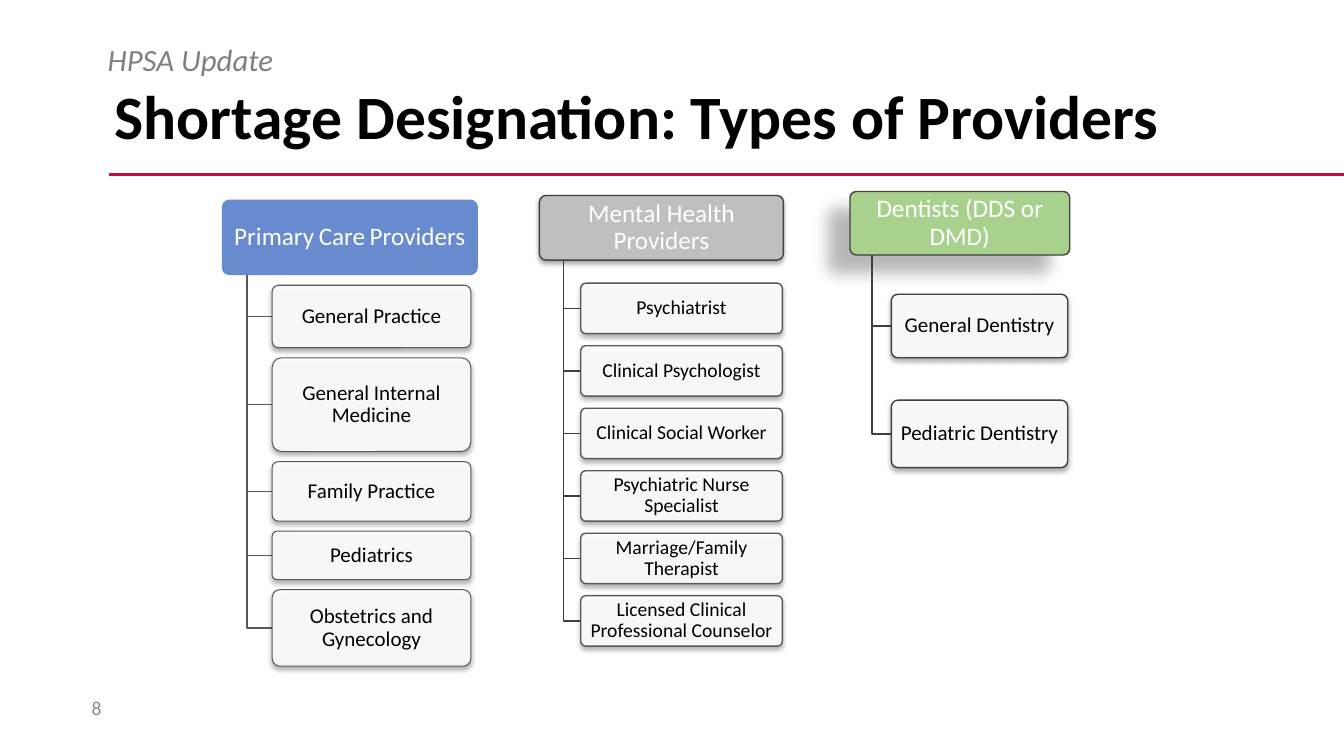
"""Build the slide on provider types for shortage designation."""
from dataclasses import dataclass
from typing import Any, Optional

from lxml.etree import SubElement
from pptx import Presentation
from pptx.dml.color import RGBColor as Rgb
from pptx.enum.shapes import MSO_CONNECTOR as Connector, MSO_SHAPE as Preset
from pptx.enum.text import MSO_ANCHOR as Anchor, PP_ALIGN as Align
from pptx.oxml.ns import qn
from pptx.util import Inches, Pt


@dataclass(frozen=True)
class Theme:
    """Colours and type sizes."""
    font: str = "Calibri"
    white: str = "FFFFFF"
    black: str = "000000"
    rule: str = "C40E3E"
    subtitle: str = "808080"
    number: str = "8C8C8C"
    dark: str = "404040"
    medium: str = "595959"
    blue: str = "688ACE"
    grey: str = "BFBFBF"
    green: str = "A9D18E"
    title_size: int = 44
    subtitle_size: int = 22
    header_size: int = 18
    leaf_size: int = 15
    small_size: int = 14


@dataclass(frozen=True)
class Box:
    """Position and size in inches."""
    left: float
    top: float
    width: float
    height: float

    def emu(self) -> tuple:
        """Return the four lengths in slide units."""
        return tuple(map(Inches, (self.left, self.top, self.width, self.height)))


@dataclass(frozen=True)
class Shadow:
    """Outer shadow with opacity in percent, lengths in points, angle in degrees."""
    opacity: int
    blur: float
    distance: float
    angle: int


@dataclass(frozen=True)
class Outline:
    """Line colour and width in points."""
    color: str
    width: float = 1


@dataclass(frozen=True)
class Leaf:
    """One provider type and the height of its card."""
    label: str
    height: float


@dataclass(frozen=True)
class Branch:
    """A provider group with its header and leaves."""
    header: str
    box: Box
    fill: str
    outline: Optional[Outline]
    shadow: Optional[Shadow]
    trunk_x: float
    leaf_x: float
    leaf_top: float
    leaf_width: float
    leaf_gap: float
    leaf_size: int
    leaf_outline: Outline
    elbow: Outline
    leaves: tuple
    space_size: int = 18


THEME = Theme()
SOFT = Shadow(32, 3.5, 2.2, 90)
WIDE = Shadow(28, 11.8, 19.7, 141)
DARK, MEDIUM = Outline(THEME.dark), Outline(THEME.medium)
MENTAL_HEALTH = ("Psychiatrist", "Clinical Psychologist", "Clinical Social Worker",
                 "Psychiatric Nurse Specialist", "Marriage/Family Therapist",
                 "Licensed Clinical Professional Counselor")
BRANCHES = (
    Branch("Dentists (DDS or DMD)", Box(8.43, 1.9, 2.18, 0.63), THEME.green, DARK, WIDE,
           8.65, 8.84, 2.92, 1.75, 0.42, THEME.leaf_size, DARK, DARK,
           (Leaf("General Dentistry", 0.63), Leaf("Pediatric Dentistry", 0.67))),
    Branch("Mental Health Providers", Box(5.35, 1.94, 2.42, 0.64), THEME.grey, DARK, SOFT,
           5.59, 5.76, 2.81, 2, 0.12, THEME.small_size, MEDIUM, DARK,
           tuple(Leaf(label, 0.5) for label in MENTAL_HEALTH)),
    Branch("Primary Care Providers", Box(2.2, 1.98, 2.54, 0.75), THEME.blue, None, None,
           2.45, 2.7, 2.83, 1.97, 0.1, THEME.leaf_size, Outline(THEME.medium, 0.75), MEDIUM,
           (Leaf("General Practice", 0.62), Leaf("General Internal Medicine", 0.93),
            Leaf("Family Practice", 0.59), Leaf("Pediatrics", 0.48),
            Leaf("Obstetrics and Gynecology", 0.76)), THEME.small_size),
)


def set_values(target: Any, values: dict) -> None:
    """Set every named attribute on the target."""
    for name, value in values.items():
        setattr(target, name, value)


def write(shape: Any, runs: list, color: str, frame: dict, paragraph: dict,
          **emphasis: bool) -> None:
    """Write sized runs into the only paragraph of a shape."""
    set_values(shape.text_frame, {"word_wrap": True, **frame})
    line = shape.text_frame.paragraphs[0]
    set_values(line, paragraph)
    for text, size in runs:
        run = line.add_run()
        run.text = text
        set_values(run.font, {"name": THEME.font, "size": Pt(size), **emphasis})
        run.font.color.rgb = Rgb.from_string(color)


def set_outline(line: Any, outline: Outline) -> None:
    """Apply an outline to a line format."""
    line.color.rgb = Rgb.from_string(outline.color)
    line.width = Pt(outline.width)


def add_shadow(shape: Any, shadow: Shadow) -> None:
    """Put an outer shadow into the effect list of a shape."""
    effects = shape._element.spPr.find(qn("a:effectLst"))
    outer = SubElement(effects, qn("a:outerShdw"), {
        "blurRad": str(Pt(shadow.blur)), "dist": str(Pt(shadow.distance)),
        "dir": str(shadow.angle * 60000), "algn": "ctr", "rotWithShape": "0"})
    color = SubElement(outer, qn("a:srgbClr"), val=THEME.black)
    SubElement(color, qn("a:alpha"), val=str(shadow.opacity * 1000))


def add_card(slide: Any, box: Box, fill: str, outline: Optional[Outline],
             shadow: Optional[Shadow], runs: list, color: str, inset: float,
             opacity: int = 100) -> None:
    """Draw a rounded card with centred text."""
    card = slide.shapes.add_shape(Preset.ROUNDED_RECTANGLE, *box.emu())
    card.adjustments[0] = 0.1
    card.shadow.inherit = False
    card.fill.solid()
    card.fill.fore_color.rgb = Rgb.from_string(fill)
    if opacity < 100:
        tint = card._element.spPr.find(qn("a:solidFill"))[0]
        SubElement(tint, qn("a:alpha"), val=str(opacity * 1000))
    if outline:
        set_outline(card.line, outline)
    else:
        card.line.fill.background()
    if shadow:
        add_shadow(card, shadow)
    side, edge = Inches(inset), Inches(inset - 0.01)
    write(card, runs, color,
          {"vertical_anchor": Anchor.MIDDLE, "margin_left": side, "margin_right": side,
           "margin_top": edge, "margin_bottom": edge},
          {"alignment": Align.CENTER, "line_spacing": 0.9})


def add_elbow(slide: Any, branch: Branch, end_y: float) -> None:
    """Draw the bent line from a header to a leaf."""
    trunk, start, end = map(Inches, (branch.trunk_x, branch.box.top + branch.box.height, end_y))
    builder = slide.shapes.build_freeform(trunk, start, scale=1.0)
    builder.add_line_segments([(trunk, end), (Inches(branch.leaf_x), end)], close=False)
    elbow = builder.convert_to_shape()
    elbow.shadow.inherit = False
    elbow.fill.background()
    set_outline(elbow.line, branch.elbow)


def add_branch(slide: Any, branch: Branch) -> None:
    """Draw a header with its leaves below it."""
    first, *others = branch.header.split(" ")
    runs = [(first, THEME.header_size)]
    for word in others:
        runs += [(" ", branch.space_size), (word, THEME.header_size)]
    add_card(slide, branch.box, branch.fill, branch.outline, branch.shadow, runs,
             THEME.white, 0.04)
    top = branch.leaf_top
    for leaf in branch.leaves:
        add_elbow(slide, branch, top + leaf.height / 2)
        add_card(slide, Box(branch.leaf_x, top, branch.leaf_width, leaf.height), THEME.white,
                 branch.leaf_outline, SOFT, [(leaf.label, branch.leaf_size)],
                 THEME.black, 0.03, 90)
        top += leaf.height + branch.leaf_gap


def main() -> None:
    """Build and save the slide."""
    deck = Presentation()
    set_values(deck, {"slide_width": Inches(13.33), "slide_height": Inches(7.5)})
    slide = deck.slides.add_slide(deck.slide_layouts[6])
    rule = slide.shapes.add_connector(
        Connector.STRAIGHT, *map(Inches, (1.08, 1.73, 13.33, 1.73)))
    SubElement(rule._element.spPr, qn("a:effectLst"))
    set_outline(rule.line, Outline(THEME.rule, 2.25))
    title = slide.shapes.add_textbox(*Box(1.04, 0.78, 11.36, 0.81).emu())
    write(title, [("Shortage Designation: Types of Providers", THEME.title_size)], THEME.black,
          {"vertical_anchor": Anchor.MIDDLE}, {"line_spacing": 0.9}, bold=True)
    for branch in BRANCHES:
        add_branch(slide, branch)
    subtitle = slide.shapes.add_textbox(*Box(0.97, 0.4, 11.45, 0.38).emu())
    write(subtitle, [("HPSA Update", THEME.subtitle_size)], THEME.subtitle,
          {}, {"line_spacing": 0.9}, italic=True)
    number = slide.shapes.add_textbox(*Box(0.81, 6.82, 0.49, 0.4).emu())
    write(number, [("8", THEME.small_size)], THEME.number,
          {"vertical_anchor": Anchor.MIDDLE}, {})
    deck.save("out.pptx")


if __name__ == "__main__":
    main()
